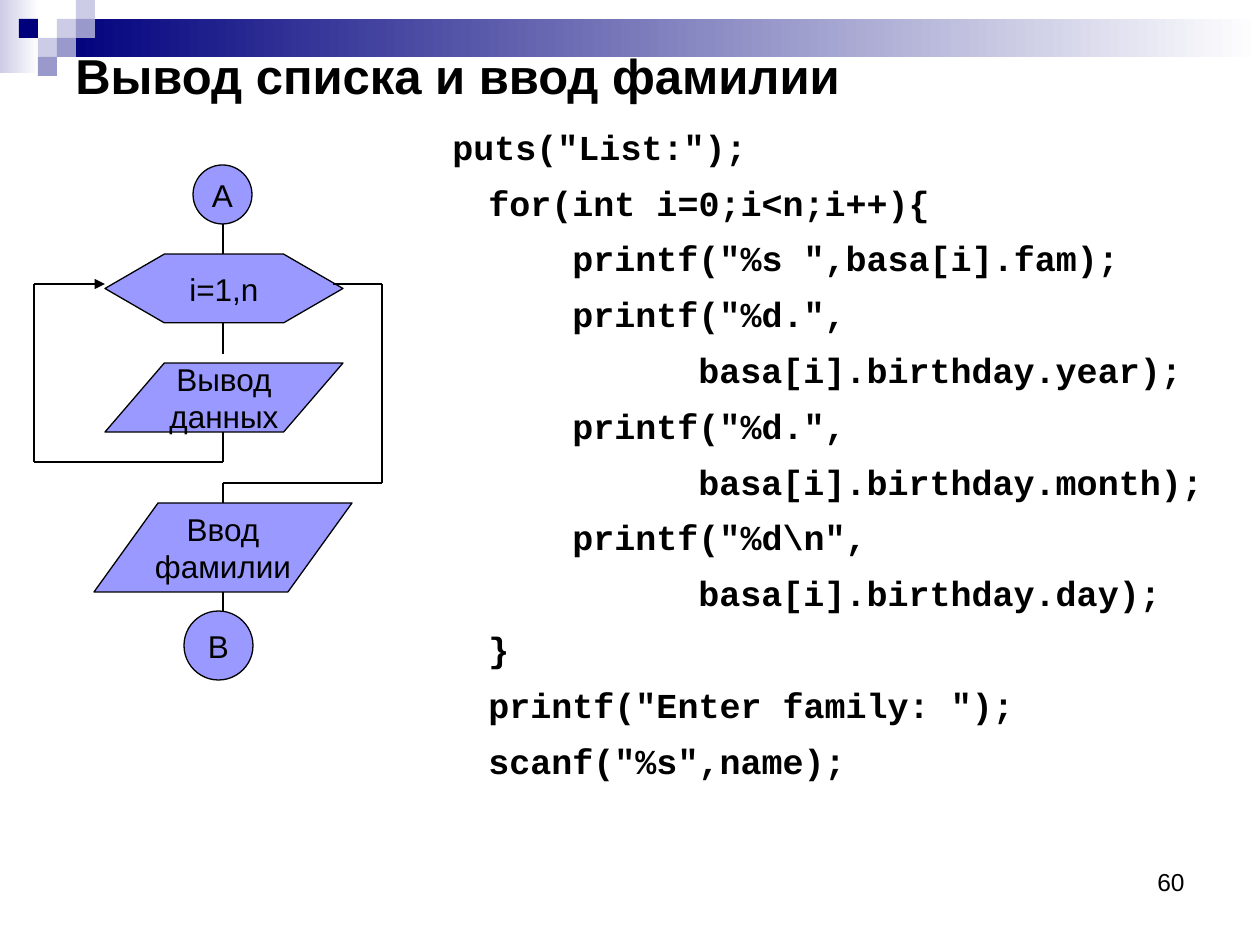
from itertools import pairwise

from pptx import Presentation
from pptx import util as u
from pptx.dml.color import RGBColor
from pptx.enum import shapes, text
from pptx.oxml import parse_xml
from pptx.oxml.ns import nsdecls, qn

SCALE = u.Inches(1) / 126
BLACK, BLUE, LILAC, PALE, NAVY = "000000", "9999FF", "9999CC", "CCCCE6", "00007D"
KIND = shapes.MSO_SHAPE
CHAR = 21  # width of one 20 pt Courier New character
CODE = [
    (48, 'puts("List:");'),
    (4 * CHAR, "for(int i=0;i<n;i++){"),
    (8 * CHAR, 'printf("%s ",basa[i].fam);'),
    (8 * CHAR, 'printf("%d.",'),
    (14 * CHAR, "basa[i].birthday.year);"),
    (8 * CHAR, 'printf("%d.",'),
    (14 * CHAR, "basa[i].birthday.month);"),
    (8 * CHAR, 'printf("%d\\n",'),
    (14 * CHAR, "basa[i].birthday.day);"),
    (4 * CHAR, "}"),
    (4 * CHAR, 'printf("Enter family: ");'),
    (4 * CHAR, 'scanf("%s",name);'),
]


def px(length):
    return u.Emu(round(length * SCALE))


def color(hex_code):
    return RGBColor.from_string(hex_code)


def add_run(paragraph, words, size, font="Arial", bold=False):
    run = paragraph.add_run()
    run.text = words
    run.font.name, run.font.size, run.font.bold = font, u.Pt(size), bold
    run.font.color.rgb = color(BLACK)


def add_block(slide, kind, x, y, w, h, fill):
    """A shape without outline; two colours in fill make a gradient."""
    block = slide.shapes.add_shape(kind, px(x), px(y), px(w), px(h))
    block.shadow.inherit = False
    block.line.fill.background()
    if isinstance(fill, tuple):
        block.fill.gradient()
        block.fill.gradient_angle = 0
        for stop, shade in zip(block.fill.gradient_stops, fill):
            stop.color.rgb = color(shade)
    else:
        block.fill.solid()
        block.fill.fore_color.rgb = color(fill)
    return block


def add_frame(slide, x, y, w, h):
    frame = slide.shapes.add_textbox(px(x), px(y), px(w), px(h)).text_frame
    frame.word_wrap = True
    return frame


def add_header(slide, x, y, w):
    cell = 19
    add_block(slide, KIND.RECTANGLE, x, y, 39, 73, (PALE, "FFFFFF"))
    add_block(slide, KIND.RECTANGLE, x + 3 * cell, y + cell, w - 3 * cell, 2 * cell, (NAVY, "FFFFFF"))
    mosaic = [(3, 1, PALE), (4, 0, PALE), (4, 1, LILAC), (2, 2, PALE),
              (1, 1, NAVY), (3, 2, LILAC), (2, 3, LILAC)]
    for column, row, shade in mosaic:
        add_block(slide, KIND.RECTANGLE, x + column * cell, y + row * cell, cell, cell, shade)


def add_title(slide, x, y, w, h):
    frame = add_frame(slide, x, y, w, h)
    frame.vertical_anchor = text.MSO_ANCHOR.MIDDLE
    add_run(frame.paragraphs[0], "Вывод списка и ввод фамилии", 28, bold=True)


def add_code(slide, x, y, w, h):
    frame = add_frame(slide, x, y, w, h)
    for number, (margin, words) in enumerate(CODE):
        line = frame.add_paragraph() if number else frame.paragraphs[0]
        line.line_spacing, line.space_before = 1.1, u.Pt(5.5)
        line._p.get_or_add_pPr().set("marL", str(px(margin)))
        add_run(line, words, 20, "Courier New", bold=True)


def add_page_number(slide, x, y, w, h):
    paragraph = add_frame(slide, x, y, w, h).paragraphs[0]
    paragraph.alignment = text.PP_ALIGN.RIGHT
    add_run(paragraph, "60", 14)


def add_step(slide, kind, x, y, w, h, labels, adjustments=()):
    step = add_block(slide, kind, x, y, w, h, BLUE)
    step.line.color.rgb, step.line.width = color(BLACK), u.Pt(0.75)
    for index, value in enumerate(adjustments):
        step.adjustments[index] = value
    frame = step.text_frame
    frame.word_wrap = False
    frame.vertical_anchor = text.MSO_ANCHOR.MIDDLE
    for number, label in enumerate(labels):
        paragraph = frame.add_paragraph() if number else frame.paragraphs[0]
        paragraph.alignment = text.PP_ALIGN.CENTER
        add_run(paragraph, label, 18)


def add_route(slide, x, y, points, arrow=False):
    """Straight connectors from point to point, with an optional arrowhead at the end."""
    for (x1, y1), (x2, y2) in pairwise(points):
        link = slide.shapes.add_connector(
            shapes.MSO_CONNECTOR.STRAIGHT, px(x + x1), px(y + y1), px(x + x2), px(y + y2))
        link.line.color.rgb, link.line.width = color(BLACK), u.Pt(0.75)
        link._element.spPr.append(parse_xml(f"<a:effectLst {nsdecls('a')}/>"))
    if arrow:
        outline = link._element.spPr.find(qn("a:ln"))
        outline.append(parse_xml(f'<a:tailEnd {nsdecls("a")} type="triangle"/>'))


def add_flowchart(slide, x, y):
    axis, right, loop_y = 189, 348, 119
    steps = [
        (KIND.OVAL, 159, 0, 59, 59, ["А"], ()),
        (KIND.HEXAGON, 71, 89, 238, 69, ["i=1,n"], (0.86, 1.15)),
        (KIND.PARALLELOGRAM, 71, 198, 238, 69, ["Вывод", "данных"], (0.86,)),
        (KIND.PARALLELOGRAM, 60, 338, 258, 89, ["Ввод", "фамилии"], (0.72,)),
        (KIND.OVAL, 150, 446, 69, 69, ["В"], ()),
    ]
    for kind, left, top, w, h, labels, adjustments in steps:
        add_step(slide, kind, x + left, y + top, w, h, labels, adjustments)
    for start, end in [(59, 89), (158, 189), (427, 446)]:
        add_route(slide, x, y, [(axis, start), (axis, end)])
    loop_back = [(axis, 267), (axis, 297), (0, 297), (0, loop_y), (71, loop_y)]
    loop_exit = [(299, loop_y), (right, loop_y), (right, 318), (axis, 318), (axis, 338)]
    add_route(slide, x, y, loop_back, arrow=True)
    add_route(slide, x, y, loop_exit)


def main():
    deck = Presentation()
    deck.slide_width, deck.slide_height = px(1260), px(945)
    slide = deck.slides.add_slide(deck.slide_layouts[6])
    add_header(slide, 0, 0, 1260)
    add_page_number(slide, 903, 861, 294, 66)
    add_title(slide, 63, 55, 1197, 39)
    add_code(slide, 392, 115, 868, 830)
    add_flowchart(slide, 34, 165)
    deck.save("out.pptx")


if __name__ == "__main__":
    main()
